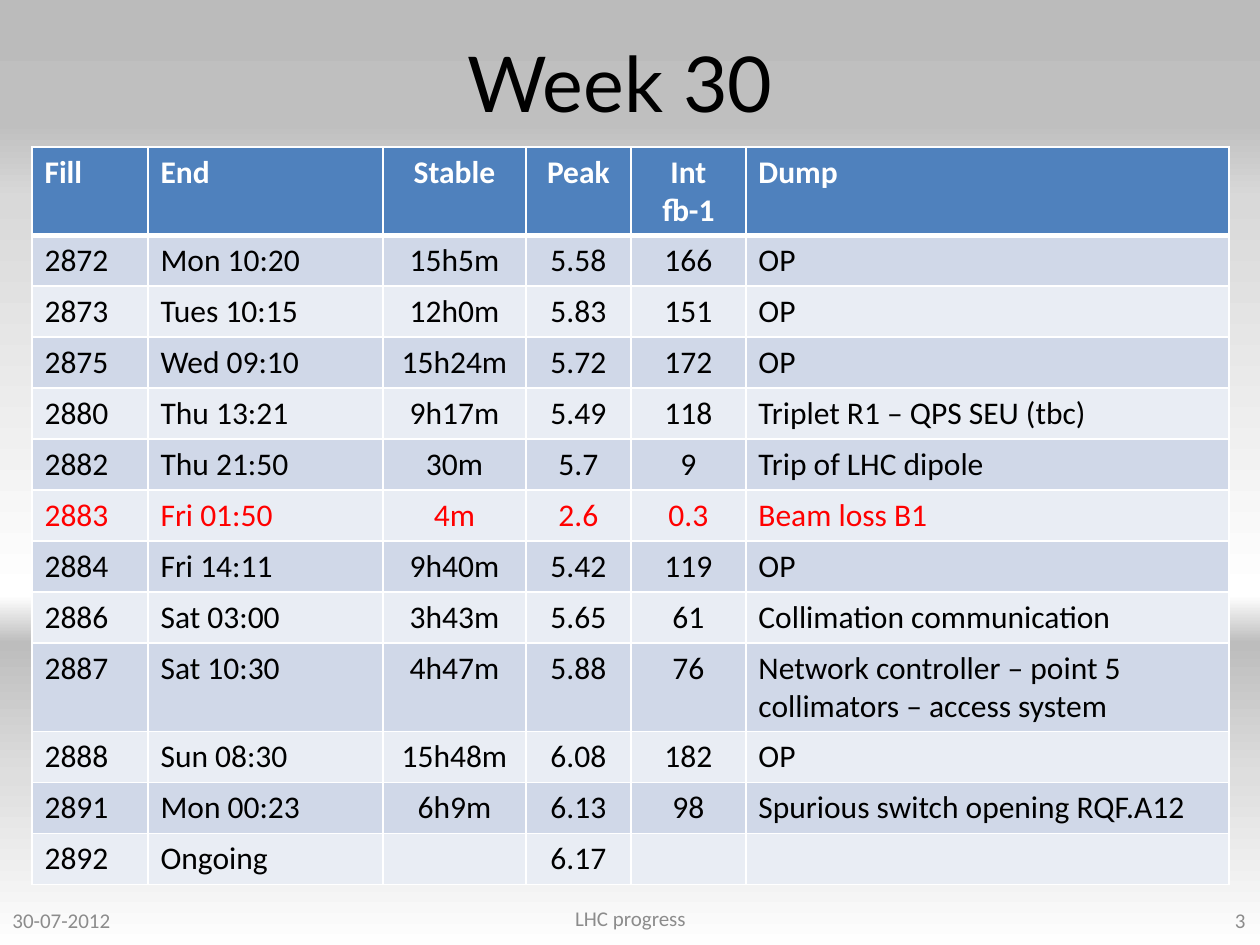
from lxml import etree
from pptx import Presentation
from pptx.dml.color import RGBColor
from pptx.enum.text import MSO_ANCHOR, PP_ALIGN
from pptx.oxml.ns import qn
from pptx.util import Emu, Pt

LEFT, CENTER, RIGHT = PP_ALIGN.LEFT, PP_ALIGN.CENTER, PP_ALIGN.RIGHT
MIDDLE = MSO_ANCHOR.MIDDLE

EMU_PER_PX = 914400 // 126
SLIDE_SIZE = (1260, 945)

COLORS = {
    "text": "000000",
    "alert": "FF0000",
    "footer": "8C8C8C",
    "header_text": "FFFFFF",
    "header": "4F81BD",
    "odd_row": "D0D8E8",
    "even_row": "E9EDF4",
    "border": "FFFFFF",
}
BACKGROUND_STOPS = [
    (0, "BBBBBB"), (13, "BFBFBF"), (21, "D9D9D9"), (63, "FFFFFF"),
    (68, "BDBDBD"), (82, "DEDEDE"), (100, "FEFEFE"),
]

COLUMNS = [
    ("Fill", 116, LEFT), ("End", 235, LEFT), ("Stable", 143, CENTER),
    ("Peak", 105, CENTER), ("Int fb-1", 115, CENTER), ("Dump", 483, LEFT),
]
FILLS = [
    ("2872", "Mon 10:20", "15h5m", "5.58", "166", "OP"),
    ("2873", "Tues 10:15", "12h0m", "5.83", "151", "OP"),
    ("2875", "Wed 09:10", "15h24m", "5.72", "172", "OP"),
    ("2880", "Thu 13:21", "9h17m", "5.49", "118", "Triplet R1 – QPS SEU (tbc)"),
    ("2882", "Thu 21:50", "30m", "5.7", "9", "Trip of LHC dipole"),
    ("2883", "Fri 01:50", "4m", "2.6", "0.3", "Beam loss B1"),
    ("2884", "Fri 14:11", "9h40m", "5.42", "119", "OP"),
    ("2886", "Sat 03:00", "3h43m", "5.65", "61", "Collimation communication"),
    ("2887", "Sat 10:30", "4h47m", "5.88", "76",
     "Network controller – point 5\ncollimators – access system"),
    ("2888", "Sun 08:30", "15h48m", "6.08", "182", "OP"),
    ("2891", "Mon 00:23", "6h9m", "6.13", "98", "Spurious switch opening RQF.A12"),
    ("2892", "Ongoing", "", "6.17", "", ""),
]
ALERT_FILL = "2883"
ROW_HEIGHT = 51


def px(length):
    return Emu(length * EMU_PER_PX)


def write_text(frame, text, size=18, font="Calibri", color="text", bold=False, align=LEFT):
    """Fill a text frame, one paragraph per line of text."""
    frame.text = text
    for paragraph in frame.paragraphs:
        paragraph.alignment = align
        for style in [paragraph.font] + [run.font for run in paragraph.runs]:
            style.size = Pt(size)
            style.name = font
            style.bold = bold
            style.color.rgb = RGBColor.from_string(COLORS[color])


def add_label(slide, left, top, width, height, text, **text_format):
    frame = slide.shapes.add_textbox(px(left), px(top), px(width), px(height)).text_frame
    frame.word_wrap = True
    frame.vertical_anchor = MIDDLE
    write_text(frame, text, **text_format)


def paint_background(slide):
    fill = slide.background.fill
    fill.gradient()
    fill.gradient_angle = 270
    stops = slide.element.find(".//" + qn("a:gsLst"))
    for default_stop in list(stops):
        stops.remove(default_stop)
    for percent, color in BACKGROUND_STOPS:
        stop = etree.SubElement(stops, qn("a:gs"), pos=str(percent * 1000))
        etree.SubElement(stop, qn("a:srgbClr"), val=color)


def set_borders(cell, **widths):
    """Draw the cell's borders; widths in points are keyed by L, R, T and B."""
    properties = cell._tc.get_or_add_tcPr()
    for side in "LRTB":
        line = etree.SubElement(properties, qn("a:ln" + side), w=str(Pt(widths.get(side, 1))))
        solid = etree.SubElement(line, qn("a:solidFill"))
        etree.SubElement(solid, qn("a:srgbClr"), val=COLORS["border"])


def add_fill_table(slide, left, top):
    rows = [[heading for heading, _, _ in COLUMNS], *FILLS]
    width = sum(column_width for _, column_width, _ in COLUMNS)
    table = slide.shapes.add_table(
        len(rows), len(COLUMNS), px(left), px(top), px(width), px(ROW_HEIGHT * len(rows))
    ).table
    for column, (_, column_width, _) in zip(table.columns, COLUMNS):
        column.width = px(column_width)
    for row_index, values in enumerate(rows):
        is_header = row_index == 0
        if is_header:
            band, color = "header", "header_text"
        else:
            band = "odd_row" if row_index % 2 else "even_row"
            color = "alert" if values[0] == ALERT_FILL else "text"
        for column_index, (value, (_, _, align)) in enumerate(zip(values, COLUMNS)):
            cell = table.cell(row_index, column_index)
            write_text(cell.text_frame, value, color=color, bold=is_header, align=align)
            set_borders(cell, T=3 if row_index == 1 else 1, B=3 if is_header else 1)
            cell.fill.solid()
            cell.fill.fore_color.rgb = RGBColor.from_string(COLORS[band])


def main():
    presentation = Presentation()
    presentation.slide_width, presentation.slide_height = map(px, SLIDE_SIZE)
    slide = presentation.slides.add_slide(presentation.slide_layouts[6])
    paint_background(slide)
    add_label(slide, 63, 22, 1134, 120, "Week 30 ", size=44, font="Lato", align=CENTER)
    footer = {"size": 12, "color": "footer"}
    add_label(slide, 0, 895, 294, 50, "30-07-2012", **footer)
    add_label(slide, 431, 893, 399, 50, "LHC progress", align=CENTER, **footer)
    add_label(slide, 964, 895, 294, 50, "3", align=RIGHT, **footer)
    add_fill_table(slide, 32, 147)
    presentation.save("out.pptx")


if __name__ == "__main__":
    main()
